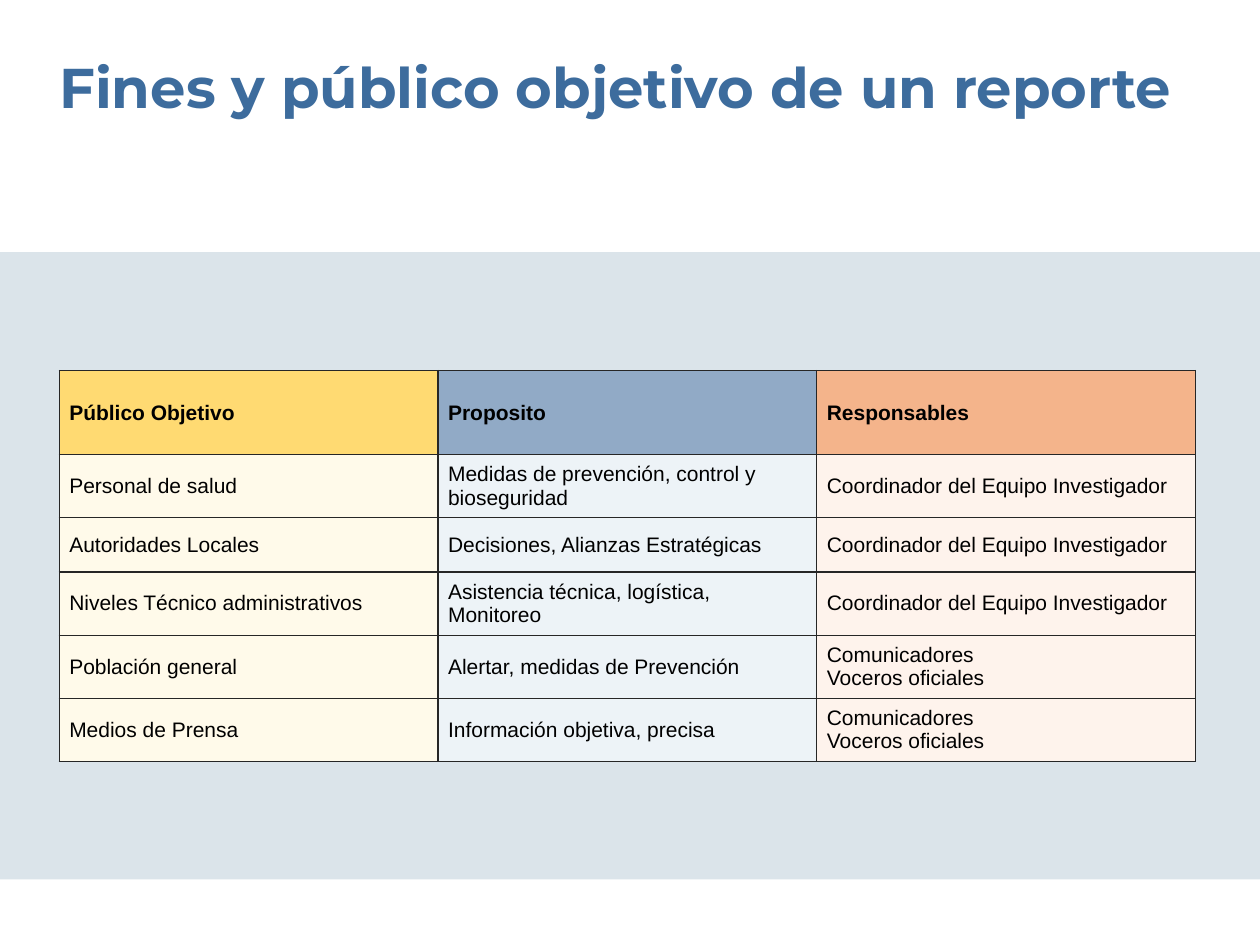
from dataclasses import dataclass

from lxml import etree
from pptx import Presentation
from pptx.dml.color import RGBColor
from pptx.enum.shapes import MSO_SHAPE
from pptx.enum.text import MSO_ANCHOR
from pptx.oxml.ns import qn
from pptx.slide import Slide
from pptx.table import _Cell
from pptx.util import Inches, Pt

RECTANGLE = MSO_SHAPE.RECTANGLE
MIDDLE = MSO_ANCHOR.MIDDLE

SLIDE_WIDTH = Inches(10)
SLIDE_HEIGHT = Inches(7.5)
MARGIN = int(SLIDE_WIDTH * 0.047)
CONTENT_WIDTH = int(SLIDE_WIDTH * 0.902)

BLACK = RGBColor(0x00, 0x00, 0x00)
TITLE_BLUE = RGBColor(0x3D, 0x6C, 0x9D)
BAND_GREY = RGBColor(0xDB, 0xE4, 0xEA)
BORDER_GREY = RGBColor(0x26, 0x26, 0x26)
YELLOW = RGBColor(0xFF, 0xDA, 0x72)
PALE_YELLOW = RGBColor(0xFF, 0xFA, 0xEA)
BLUE = RGBColor(0x91, 0xAA, 0xC6)
PALE_BLUE = RGBColor(0xED, 0xF3, 0xF7)
ORANGE = RGBColor(0xF4, 0xB4, 0x8B)
PALE_ORANGE = RGBColor(0xFE, 0xF3, 0xEC)

COORDINATOR = "Coordinador del Equipo Investigador"
SPOKESPEOPLE = "Comunicadores\nVoceros oficiales"


@dataclass(frozen=True)
class Column:
    heading: str
    heading_fill: RGBColor
    body_fill: RGBColor
    entries: tuple[str, ...]


COLUMNS = (
    Column("Público Objetivo", YELLOW, PALE_YELLOW, (
        "Personal de salud",
        "Autoridades Locales",
        "Niveles Técnico administrativos",
        "Población general",
        "Medios de Prensa",
    )),
    Column("Proposito", BLUE, PALE_BLUE, (
        "Medidas de prevención, control y bioseguridad",
        "Decisiones, Alianzas Estratégicas",
        "Asistencia técnica, logística, Monitoreo",
        "Alertar, medidas de Prevención",
        "Información objetiva, precisa",
    )),
    Column("Responsables", ORANGE, PALE_ORANGE,
           (COORDINATOR,) * 3 + (SPOKESPEOPLE,) * 2),
)
ROW_HEIGHTS = (0.67, 0.5, 0.43, 0.5, 0.5, 0.5)


def add_background_band(slide: Slide) -> None:
    band = slide.shapes.add_shape(
        RECTANGLE, 0, Inches(2), SLIDE_WIDTH, int(SLIDE_HEIGHT * 0.664))
    band.shadow.inherit = False
    band.fill.solid()
    band.fill.fore_color.rgb = BAND_GREY
    band.line.fill.background()


def add_title(slide: Slide, wording: str) -> None:
    title = slide.shapes.add_textbox(
        MARGIN, int(SLIDE_HEIGHT * 0.056), CONTENT_WIDTH, int(SLIDE_HEIGHT * 0.072))
    frame = title.text_frame
    frame.word_wrap = True
    frame.margin_left = frame.margin_right = 0
    frame.margin_top = frame.margin_bottom = 0
    frame.text = wording
    font = frame.paragraphs[0].runs[0].font
    font.name = "Montserrat"
    font.size = Pt(32)
    font.bold = True
    font.color.rgb = TITLE_BLUE


def add_borders(cell: _Cell) -> None:
    properties = cell._tc.get_or_add_tcPr()
    for side in ("a:lnL", "a:lnR", "a:lnT", "a:lnB"):
        border = etree.SubElement(properties, qn(side), w=str(Pt(0.75)))
        fill = etree.SubElement(border, qn("a:solidFill"))
        etree.SubElement(fill, qn("a:srgbClr"), val=str(BORDER_GREY))


def fill_cell(cell: _Cell, wording: str, color: RGBColor, bold: bool) -> None:
    add_borders(cell)
    cell.fill.solid()
    cell.fill.fore_color.rgb = color
    cell.vertical_anchor = MIDDLE
    cell.margin_left = cell.margin_right = Inches(0.08)
    cell.margin_top = cell.margin_bottom = Inches(0.05)
    cell.text_frame.text = wording
    for paragraph in cell.text_frame.paragraphs:
        for run in paragraph.runs:
            run.font.name = "Arial"
            run.font.size = Pt(12)
            run.font.bold = bold
            run.font.color.rgb = BLACK


def add_audience_table(slide: Slide) -> None:
    table = slide.shapes.add_table(
        len(ROW_HEIGHTS), len(COLUMNS), MARGIN, int(SLIDE_HEIGHT * 0.392),
        CONTENT_WIDTH, Inches(sum(ROW_HEIGHTS))).table
    table.first_row = False
    table.horz_banding = False
    for row, height in zip(table.rows, ROW_HEIGHTS):
        row.height = Inches(height)
    for column_index, column in enumerate(COLUMNS):
        fill_cell(table.cell(0, column_index), column.heading,
                  column.heading_fill, bold=True)
        for row_index, entry in enumerate(column.entries, start=1):
            fill_cell(table.cell(row_index, column_index), entry,
                      column.body_fill, bold=False)


def main() -> None:
    presentation = Presentation()
    presentation.slide_width = SLIDE_WIDTH
    presentation.slide_height = SLIDE_HEIGHT
    slide = presentation.slides.add_slide(presentation.slide_layouts[6])
    add_background_band(slide)
    add_title(slide, "Fines y público objetivo de un reporte")
    add_audience_table(slide)
    presentation.save("out.pptx")


if __name__ == "__main__":
    main()
